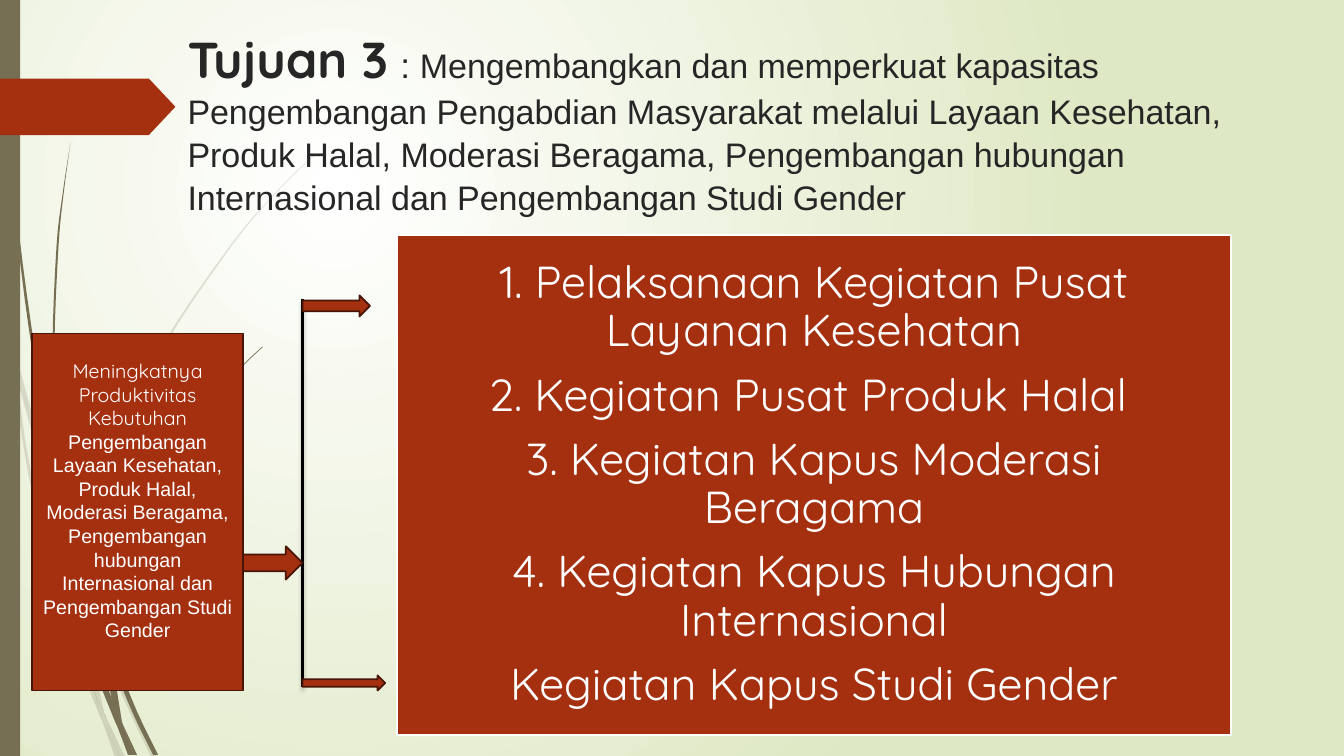
"""Builds the "Tujuan 3" slide: a goal, its expected outcome and five activities."""
from lxml import etree
from pptx import Presentation, util as u
from pptx.dml.color import RGBColor
from pptx.enum import shapes, text
from pptx.oxml import ns

PX = 9144
OLIVE, RUST, MAROON, WHITE = "766F54", "A53010", "481507", "FFFFFF"
GOAL = ("Mengembangkan dan memperkuat kapasitas Pengembangan Pengabdian Masyarakat "
        "melalui Layaan Kesehatan, Produk Halal, Moderasi Beragama, Pengembangan "
        "hubungan Internasional dan Pengembangan Studi Gender")
OUTCOME = ("Pengembangan Layaan Kesehatan, Produk Halal, Moderasi Beragama, Pengembangan "
           "hubungan Internasional dan Pengembangan Studi Gender")
ACTIVITIES = [
    "1. Pelaksanaan Kegiatan Pusat Layanan Kesehatan",
    "2. Kegiatan Pusat Produk Halal ",
    "3. Kegiatan Kapus Moderasi Beragama",
    "4. Kegiatan Kapus Hubungan Internasional",
    "Kegiatan Kapus Studi Gender",
]
PALE_BLADES = [
    ([(0, 282), (9, 322), (11, 350)], [(0, 299), (10, 344), (11, 350)]),
    ([(14, 345), (62, 520), (85, 586)], [(17, 376), (58, 522), (84, 599)]),
    ([(88, 596), (92, 607), (127, 692), (155, 751)], [(88, 610), (123, 694), (150, 751)]),
    ([(105, 711), (124, 751)], [(105, 711), (119, 751)]),
    ([(11, 350), (17, 376), (31, 469), (70, 619), (93, 683), (99, 707), (101, 714)],
     [(11, 350), (28, 470), (65, 621), (92, 693), (101, 714)]),
    ([(84, 599), (87, 646), (93, 683), (96, 692), (105, 711)],
     [(84, 599), (88, 610), (91, 646), (103, 706), (105, 711)]),
    ([(312, 153), (289, 175), (268, 197), (228, 244), (158, 348), (107, 461), (85, 584), (88, 596)],
     [(312, 154), (290, 175), (268, 198), (229, 245), (160, 349), (110, 462), (88, 584), (88, 596)]),
    ([(101, 714), (114, 751)], [(101, 714), (119, 751)]),
    ([(93, 683), (99, 707), (101, 714), (119, 751)], [(93, 683), (96, 692), (105, 711), (119, 751)]),
]
DARK_BLADES = [
    ([(3, 0), (4, 48), (7, 110), (17, 233), (33, 355), (56, 477), (57, 481)],
     [(4, 0), (5, 48), (8, 109), (19, 232), (36, 355), (55, 453), (57, 481)]),
    ([(110, 641), (113, 649), (136, 706), (157, 749)], [(110, 641), (111, 656), (132, 708), (152, 749)]),
    ([(57, 477), (68, 557), (93, 659), (111, 708), (117, 722)],
     [(57, 477), (64, 505), (72, 556), (98, 657), (110, 691), (116, 717), (117, 722)]),
    ([(70, 141), (62, 193), (56, 245), (52, 349), (55, 449), (60, 472)],
     [(70, 141), (63, 193), (58, 245), (54, 349), (58, 453), (60, 472)]),
    ([(122, 719), (136, 749)], [(122, 719), (133, 749)]),
    ([(260, 344), (245, 358), (231, 373), (204, 405), (156, 474), (122, 551), (106, 631), (110, 641)],
     [(261, 344), (245, 359), (231, 374), (205, 406), (158, 476), (125, 552), (111, 633), (110, 641)]),
    ([(117, 722), (127, 749)], [(117, 722), (131, 749)]),
    ([(106, 645), (110, 691), (116, 706), (122, 719)], [(106, 645), (111, 656), (121, 716), (122, 719)]),
    ([(110, 691), (117, 722), (130, 749)], [(110, 691), (116, 706), (122, 719), (133, 749)]),
]


def paint(shape, fill, line=None):
    """Gives a shape its fill and outline, without a shadow."""
    shape.shadow.inherit = False
    shape.fill.solid()
    shape.fill.fore_color.rgb = RGBColor.from_string(fill)
    if line:
        shape.line.color.rgb = RGBColor.from_string(line)
        shape.line.width = u.Pt(1.25)
    else:
        shape.line.fill.background()
    return shape


def smooth_edge(nodes):
    """Samples a Catmull-Rom curve through the nodes, in EMU."""
    padded = [nodes[0], *nodes, nodes[-1]]
    curve = []
    for a, b, c, d in zip(padded, padded[1:], padded[2:], padded[3:]):
        for t in (0, 0.25, 0.5, 0.75):
            curve.append([round(PX / 2 * (2 * q + (r - p) * t + (2 * p - 5 * q + 4 * r - s) * t ** 2
                                          + (3 * q - p - 3 * r + s) * t ** 3))
                          for p, q, r, s in zip(a, b, c, d)])
    return curve + [[v * PX for v in nodes[-1]]]


deck = Presentation()
deck.slide_width, deck.slide_height = 1333 * PX, 750 * PX
slide = deck.slides.add_slide(deck.slide_layouts[5])
canvas = slide.shapes

backdrop = slide.background.fill
backdrop.gradient()
for stop, colour in zip(backdrop.gradient_stops, (WHITE, "DFE8C4")):
    stop.color.rgb = RGBColor.from_string(colour)
gradient = slide.background._cSld.find(".//" + ns.qn("a:gradFill"))
gradient.remove(gradient.find(ns.qn("a:lin")))
glow = etree.SubElement(gradient, ns.qn("a:path"), path="circle")
etree.SubElement(glow, ns.qn("a:fillToRect"), l="50000", t="50000", r="100000", b="100000")

for blades, opacity in ((PALE_BLADES, 20), (DARK_BLADES, 100)):
    for left_edge, right_edge in blades:
        outline = smooth_edge(left_edge) + smooth_edge(right_edge)[::-1]
        builder = canvas.build_freeform(*outline[0])
        builder.add_line_segments(outline[1:], close=True)
        blade = paint(builder.convert_to_shape(), OLIVE)
        if opacity < 100:
            tint = blade._element.spPr.find(".//" + ns.qn("a:srgbClr"))
            etree.SubElement(tint, ns.qn("a:alpha"), val=str(opacity * 1000))

kind = shapes.MSO_SHAPE
paint(canvas.add_shape(kind.RECTANGLE, 0, 0, 20 * PX, 750 * PX), OLIVE)
page_tag = paint(canvas.add_shape(kind.PENTAGON, 0, 78 * PX, 174 * PX, 56 * PX), RUST)
page_tag.adjustments[0] = 0.47

title = canvas.title
canvas._spTree.append(title._element)
title.left, title.top, title.width, title.height = (v * PX for v in (176, 20, 1138, 188))
title.text_frame.vertical_anchor = text.MSO_ANCHOR.TOP
title.text_frame.auto_size = text.MSO_AUTO_SIZE.NONE
heading = title.text_frame.paragraphs[0]
heading.alignment = text.PP_ALIGN.LEFT
heading.line_spacing = 1.05
heading.font.color.rgb = RGBColor.from_string("262626")
for words, size, face, bold in (("Tujuan 3", 36, "Quicksand", True), (" ", 32.4, "Quicksand", False),
                                (": ", 25.2, "Arial", False), (GOAL, 24.3, "Arial", False)):
    part = heading.add_run()
    part.text = words
    part.font.size, part.font.name, part.font.bold = u.Pt(size), face, bold
    part.font.color.rgb = RGBColor.from_string("262626")

activities = paint(canvas.add_shape(kind.RECTANGLE, 394 * PX, 233 * PX, 827 * PX, 496 * PX), RUST, WHITE)
listing = activities.text_frame
listing.word_wrap = True
listing.margin_left = listing.margin_right = listing.margin_top = listing.margin_bottom = 13 * PX
listing.text = "\n".join(ACTIVITIES)
for item in listing.paragraphs:
    item.alignment = text.PP_ALIGN.CENTER
    item.line_spacing = 0.9
    item.space_after = u.Pt(11.2)
    item.font.size, item.font.name = u.Pt(32), "Quicksand"
    item.font.color.rgb = RGBColor.from_string(WHITE)

outcome = paint(canvas.add_shape(kind.RECTANGLE, 32 * PX, 331 * PX, 209 * PX, 354 * PX), RUST, MAROON)
outcome.text_frame.word_wrap = True
outcome.text_frame.margin_bottom = 28 * PX
result = outcome.text_frame.paragraphs[0]
result.alignment = text.PP_ALIGN.CENTER
result.font.size = u.Pt(14)
result.font.color.rgb = RGBColor.from_string(WHITE)
for words, face in (("Meningkatnya Produktivitas Kebutuhan ", "Quicksand"), (OUTCOME, "Arial")):
    part = result.add_run()
    part.text, part.font.name = words, face

trunk = canvas.add_connector(shapes.MSO_CONNECTOR.STRAIGHT, 300 * PX, 297 * PX, 300 * PX, 682 * PX)
trunk.line.color.rgb = RGBColor.from_string("000000")
trunk.line.width = u.Pt(1.75)
effects = etree.SubElement(trunk._element.spPr, ns.qn("a:effectLst"))
shade = etree.SubElement(effects, ns.qn("a:outerShdw"), blurRad=str(u.Pt(3)), dist=str(u.Pt(2)),
                         dir="5400000", rotWithShape="0")
shade_colour = etree.SubElement(shade, ns.qn("a:srgbClr"), val="000000")
etree.SubElement(shade_colour, ns.qn("a:alpha"), val="25000")

for box in ((300, 293, 67, 21), (300, 670, 82, 15), (241, 542, 59, 33)):
    paint(canvas.add_shape(kind.RIGHT_ARROW, *(v * PX for v in box)), RUST, MAROON)

deck.save("out.pptx")
